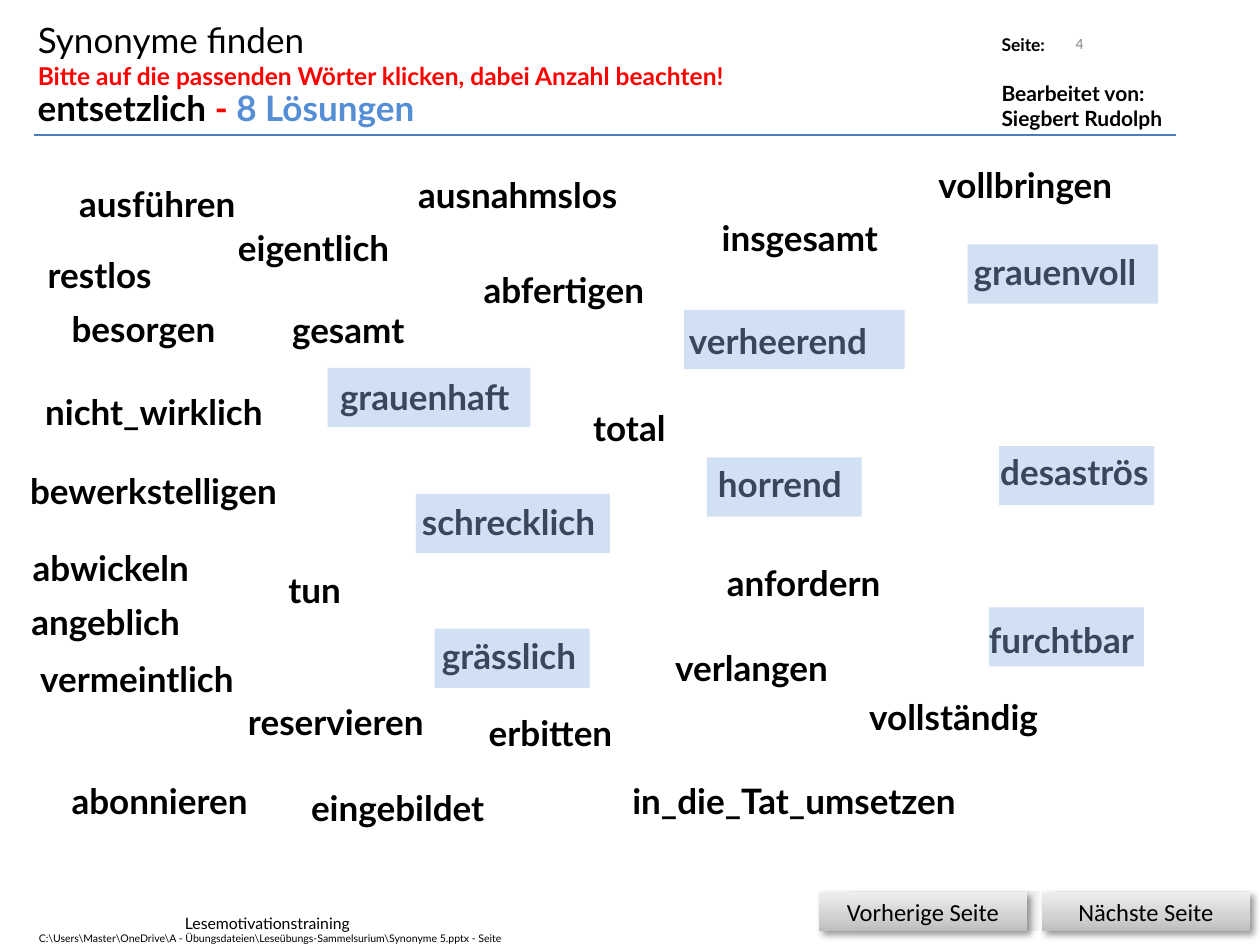
"""Build the synonym exercise slide for the word 'entsetzlich'."""
from typing import NamedTuple

from pptx import Presentation
from pptx.dml.color import RGBColor
from pptx.enum.shapes import MSO_CONNECTOR, MSO_SHAPE
from pptx.enum.text import MSO_ANCHOR, MSO_AUTO_SIZE, PP_ALIGN
from pptx.oxml import parse_xml
from pptx.oxml.ns import nsdecls
from pptx.oxml.xmlchemy import OxmlElement
from pptx.util import Emu, Pt

BLACK = RGBColor(0x00, 0x00, 0x00)
WHITE = RGBColor(0xFF, 0xFF, 0xFF)
RED = RGBColor(0xFF, 0x00, 0x00)
BLUE = RGBColor(0x55, 0x8E, 0xD5)
RULE = RGBColor(0x4B, 0x7E, 0xBC)
GREY = RGBColor(0x89, 0x89, 0x89)
PALE = RGBColor(0xF2, 0xF2, 0xF2)
MARK = RGBColor(0x8E, 0xB4, 0xE3)
PX = 9144
WORD_H, MARK_H = 44, 47

FREE = {"word_wrap": False, "auto_size": MSO_AUTO_SIZE.SHAPE_TO_FIT_TEXT,
        "vertical_anchor": MSO_ANCHOR.TOP}
MIDDLE = {"word_wrap": True, "vertical_anchor": MSO_ANCHOR.MIDDLE}


class Box(NamedTuple):
    """A rectangle in px."""
    x: int
    y: int
    w: int
    h: int


class Run(NamedTuple):
    """A piece of text with its format."""
    text: str
    size: int
    color: RGBColor = BLACK
    bold: bool = False
    name: str = "Lato"


class Word(NamedTuple):
    """A word to click on."""
    text: str
    x: int
    y: int
    w: int


class Button(NamedTuple):
    """A navigation button with its backing plate."""
    text: str
    face: Box
    plate: Box


SOLUTIONS = [
    Word("grauenvoll", 763, 194, 157), Word("verheerend", 537, 249, 173),
    Word("furchtbar", 775, 486, 144), Word("horrend", 560, 362, 126),
    Word("schrecklich", 325, 392, 169), Word("grässlich", 341, 499, 133),
    Word("desaströs", 784, 353, 143), Word("grauenhaft", 260, 293, 162),
]
MARKS = [(768, 194, 151), (543, 246, 175), (260, 292, 161), (561, 363, 123),
         (793, 354, 123), (330, 392, 154), (785, 482, 123), (345, 499, 123)]
OTHERS = [
    Word("insgesamt", 563, 167, 150), Word("total", 461, 318, 81),
    Word("vollständig", 680, 547, 161), Word("ausnahmslos", 322, 133, 184),
    Word("restlos", 28, 196, 108), Word("gesamt", 222, 240, 113),
    Word("verlangen", 526, 508, 149), Word("erbitten", 378, 560, 128),
    Word("abonnieren", 47, 614, 169), Word("reservieren", 187, 551, 173),
    Word("anfordern", 567, 441, 151), Word("abfertigen", 374, 208, 156),
    Word("besorgen", 47, 239, 139), Word("vollbringen", 735, 125, 167),
    Word("tun", 219, 446, 64), Word("abwickeln", 16, 429, 152),
    Word("in_die_Tat_umsetzen", 492, 614, 303),
    Word("bewerkstelligen", 14, 368, 229), Word("ausführen", 53, 140, 152),
    Word("eigentlich", 179, 175, 150), Word("angeblich", 15, 472, 146),
    Word("eingebildet", 237, 619, 168), Word("vermeintlich", 22, 517, 187),
    Word("nicht_wirklich", 26, 305, 209),
]
BUTTONS = [
    Button("Nächste Seite", Box(827, 708, 165, 31), Box(839, 707, 150, 32)),
    Button("Vorherige Seite", Box(650, 708, 165, 31), Box(675, 707, 150, 32)),
]


def emu(box: Box) -> list[Emu]:
    """Turn a px box into EMU lengths."""
    return [Emu(v * PX) for v in box]


def write(tf, paragraphs: list[list[Run]], frame: dict, align=PP_ALIGN.LEFT) -> None:
    """Fill a text frame with formatted paragraphs."""
    for key, value in frame.items():
        setattr(tf, key, value)
    for i, runs in enumerate(paragraphs):
        p = tf.add_paragraph() if i else tf.paragraphs[0]
        p.alignment = align
        for run in runs:
            r = p.add_run()
            r.text = run.text
            r.font.color.rgb = run.color
            style = {"size": Pt(run.size), "bold": run.bold, "name": run.name}
            for key, value in style.items():
                setattr(r.font, key, value)


def add_text(s, box: Box, paragraphs: list[list[Run]], frame: dict = FREE,
             align=PP_ALIGN.LEFT):
    """Add a text box and return its frame."""
    tf = s.shapes.add_textbox(*emu(box)).text_frame
    write(tf, paragraphs, frame, align)
    return tf


def add_words(s, words: list[Word]) -> None:
    """Add the words of the exercise."""
    for word in words:
        add_text(s, Box(word.x, word.y, word.w, WORD_H),
                 [[Run(word.text, 20, bold=True)]])


def add_rect(shapes, box: Box, color: RGBColor):
    """Add a plain filled rectangle."""
    sp = shapes.add_shape(MSO_SHAPE.RECTANGLE, *emu(box))
    sp.shadow.inherit = False
    sp.fill.solid()
    sp.fill.fore_color.rgb = color
    sp.line.fill.background()
    return sp


def add_mark(s, box: Box) -> None:
    """Add a translucent marker over a solution."""
    sp = add_rect(s.shapes, box, MARK)
    alpha = OxmlElement("a:alpha")
    alpha.set("val", "40000")
    sp._element.spPr.find(".//{*}srgbClr").append(alpha)


def add_button(s, button: Button) -> None:
    """Add a shaded button on its plate."""
    group = s.shapes.add_group_shape()
    add_rect(group.shapes, button.plate, PALE)
    sp = add_rect(group.shapes, button.face, PALE)
    sp.fill.gradient()
    sp.fill.gradient_angle = 90
    stops = sp._element.spPr.find(".//{*}gsLst")
    stops.getparent().replace(stops, parse_xml(
        f'<a:gsLst {nsdecls("a")}>' + "".join(
            f'<a:gs pos="{pos}000"><a:srgbClr val="{color}"/></a:gs>'
            for pos, color in ((0, "BDBDBD"), (35, "D1D1D1"), (100, "EEEEEE")))
        + "</a:gsLst>"))
    sp._element.spPr.find("{*}effectLst").append(parse_xml(
        f'<a:outerShdw {nsdecls("a")} blurRad="{Pt(4)}" dist="{Pt(3)}" dir="2700000">'
        '<a:srgbClr val="000000"><a:alpha val="40000"/></a:srgbClr></a:outerShdw>'))
    write(sp.text_frame, [[Run(button.text, 14, name="Calibri")]], MIDDLE,
          PP_ALIGN.CENTER)


def main() -> None:
    """Build and save the slide."""
    prs = Presentation()
    prs.slide_width, prs.slide_height = Emu(1000 * PX), Emu(750 * PX)
    s = prs.slides.add_slide(prs.slide_layouts[5])

    title = s.shapes.title
    title.left, title.top, title.width, title.height = emu(Box(20, 10, 606, 67))
    title.fill.solid()
    title.fill.fore_color.rgb = WHITE
    write(title.text_frame, [
        [Run("Synonyme finden", 20)],
        [Run("Bitte auf die passenden Wörter klicken, dabei Anzahl beachten!",
             14, RED, True)]], FREE)

    tf = add_text(s, Box(785, 22, 158, 88), [
        [Run("Seite:", 10, bold=True)], [Run("Bearbeitet von:", 12, bold=True)],
        [Run("Siegbert Rudolph", 12, bold=True)]])
    tf.paragraphs[1].space_before = Pt(14.5)
    rule = s.shapes.add_connector(MSO_CONNECTOR.STRAIGHT, *emu(Box(27, 107, 933, 107)))
    rule.line.color.rgb = RULE
    rule.line.width = Pt(1)
    rule._element.spPr.append(OxmlElement("a:effectLst"))
    add_text(s, Box(137, 720, 156, 25), [[Run("Lesemotivationstraining", 9)]])
    add_text(s, Box(637, 15, 233, 40), [[Run("4", 8, GREY)]], MIDDLE, PP_ALIGN.RIGHT)
    for button in BUTTONS:
        add_button(s, button)
    add_text(s, Box(20, 64, 340, WORD_H), [[
        Run("entsetzlich ", 20, bold=True), Run("- ", 20, RED, True),
        Run("8 Lösungen", 20, BLUE, True)]])

    add_words(s, SOLUTIONS)
    for x, y, w in MARKS:
        add_mark(s, Box(x, y, w, MARK_H))
    add_words(s, OTHERS)
    add_text(s, Box(21, 735, 393, 20), [[Run(
        r"C:\Users\Master\OneDrive\A - Übungsdateien\Leseübungs-Sammelsurium"
        r"\Synonyme 5.pptx - Seite", 6)]])
    prs.save("out.pptx")


if __name__ == "__main__":
    main()
